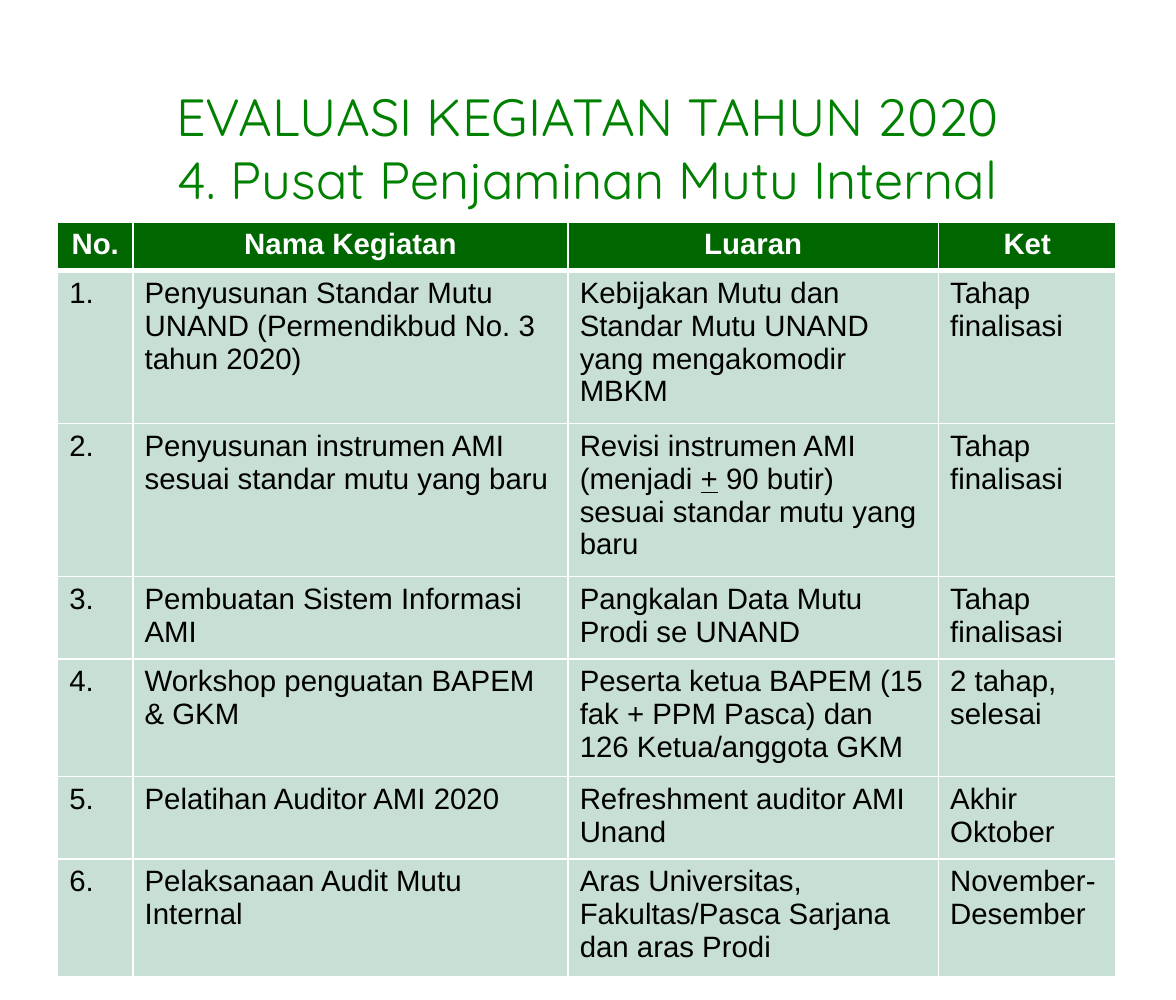
from lxml import etree
from pptx import Presentation
from pptx.dml.color import RGBColor
from pptx.enum import text
from pptx.oxml import ns
from pptx.util import Inches, Pt

COLORS = {"title": "008000", "header": "006600", "body": "C7DFD4",
          "white": "FFFFFF", "black": "000000"}
COLUMNS = [0.64, 3.7, 3.15, 1.51]
ROWS = [0.41, 1.3, 1.3, 0.7, 1, 0.7, 1]
HEADINGS = ["No.", "Nama Kegiatan", "Luaran", "Ket"]
# Each activity: name, output (a list alternates plain and underlined text), status
ACTIVITIES = [
    ("Penyusunan Standar Mutu UNAND (Permendikbud No. 3 tahun 2020)",
     ["Kebijakan Mutu dan Standar Mutu UNAND yang mengakomodir MBKM"], "Tahap finalisasi"),
    ("Penyusunan instrumen AMI sesuai standar mutu yang baru",
     ["Revisi instrumen AMI (menjadi ", "+", " 90 butir) sesuai standar mutu yang baru"],
     "Tahap finalisasi"),
    ("Pembuatan Sistem Informasi AMI",
     ["Pangkalan Data Mutu Prodi se UNAND"], "Tahap finalisasi"),
    ("Workshop penguatan BAPEM & GKM",
     ["Peserta ketua BAPEM (15 fak + PPM Pasca) dan 126 Ketua/anggota GKM"],
     "2 tahap, selesai"),
    ("Pelatihan Auditor AMI 2020", ["Refreshment auditor AMI Unand"], "Akhir Oktober"),
    ("Pelaksanaan Audit Mutu Internal",
     ["Aras Universitas, Fakultas/Pasca Sarjana dan aras Prodi"], "November-Desember"),
]


def set_font(font, name, size, color, bold=False):
    font.name, font.size, font.bold = name, Pt(size), bold
    font.color.rgb = RGBColor.from_string(COLORS[color])


def add_border(cell, side, width):
    line = etree.SubElement(cell._tc.get_or_add_tcPr(), ns.qn(f"a:ln{side}"), w=str(Pt(width)))
    fill = etree.SubElement(line, ns.qn("a:solidFill"))
    etree.SubElement(fill, ns.qn("a:srgbClr"), val=COLORS["white"])


deck = Presentation()
deck.slide_width, deck.slide_height = Inches(10), Inches(8.5)
page = deck.slides.add_slide(deck.slide_layouts[6])

# Title
box = page.shapes.add_textbox(Inches(0.5), Inches(0.77), Inches(9), Inches(0.96))
frame = box.text_frame
frame.word_wrap = True
frame.vertical_anchor = text.MSO_ANCHOR.MIDDLE
para = frame.paragraphs[0]
para.alignment = text.PP_ALIGN.CENTER
para.add_run().text = "EVALUASI KEGIATAN TAHUN 2020"
para.add_line_break()
para.add_run().text = "4. Pusat Penjaminan Mutu Internal"
set_font(para.font, "Quicksand", 32, "title")

# Table grid
table = page.shapes.add_table(len(ROWS), len(COLUMNS), Inches(0.49), Inches(1.89),
                              Inches(sum(COLUMNS)), Inches(sum(ROWS))).table
for column, width in zip(table.columns, COLUMNS):
    column.width = Inches(width)
for row, height in zip(table.rows, ROWS):
    row.height = Inches(height)

# Table contents
records = [[[heading] for heading in HEADINGS]]
for number, (name, output, status) in enumerate(ACTIVITIES, 1):
    records.append([[f"{number}."], [name], output, [status]])

for r, record in enumerate(records):
    header = r == 0
    for c, pieces in enumerate(record):
        cell = table.cell(r, c)
        for side in "LRTB":
            heavy = (header and side == "B") or (r == 1 and side == "T")
            add_border(cell, side, 3 if heavy else 1)
        cell.fill.solid()
        cell.fill.fore_color.rgb = RGBColor.from_string(COLORS["header" if header else "body"])
        para = cell.text_frame.paragraphs[0]
        para.alignment = text.PP_ALIGN.CENTER if header else text.PP_ALIGN.LEFT
        set_font(para.font, "Arial", 18, "white" if header else "black", bold=header)
        for i, piece in enumerate(pieces):
            span = para.add_run()
            span.text = piece
            if i % 2:
                span.font.underline = True

deck.save("out.pptx")
